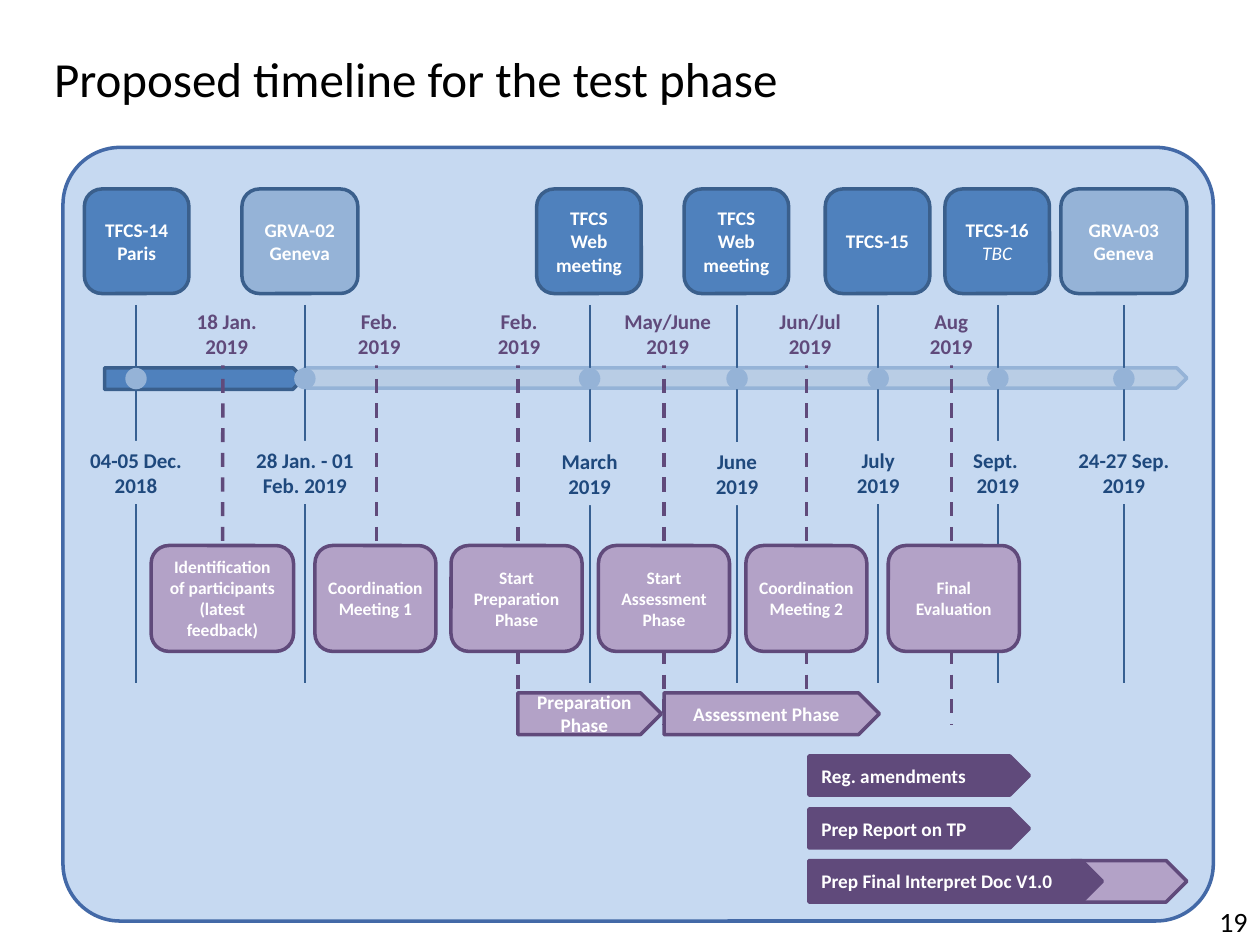
from lxml.etree import SubElement
from pptx import Presentation
from pptx.dml.color import RGBColor
from pptx.enum.dml import MSO_LINE
from pptx.enum.shapes import MSO_CONNECTOR, MSO_SHAPE as SHAPE
from pptx.enum.text import MSO_ANCHOR as ANCHOR, PP_ALIGN as ALIGN
from pptx.oxml.ns import qn
from pptx.util import Inches, Pt

BLACK = RGBColor(0x00, 0x00, 0x00)
WHITE = RGBColor(0xFF, 0xFF, 0xFF)
PANEL = RGBColor(0xC6, 0xD9, 0xF1)
PANEL_EDGE = RGBColor(0x43, 0x69, 0xA7)
BLUE = RGBColor(0x4F, 0x81, 0xBD)
BLUE_EDGE = RGBColor(0x3A, 0x5F, 0x8C)
LIGHT_BLUE = RGBColor(0x95, 0xB3, 0xD7)
PALE_BLUE = RGBColor(0xB9, 0xCD, 0xE5)
LINE_BLUE = RGBColor(0x37, 0x60, 0x92)
NAVY = RGBColor(0x1F, 0x49, 0x7D)
PURPLE = RGBColor(0x60, 0x4A, 0x7B)
LILAC = RGBColor(0xB3, 0xA2, 0xC7)

BOX_TEXT = dict(size=Pt(11), bold=True)
DATE_TEXT = dict(size=Pt(12), bold=True)
ACTIVITY_TEXT = dict(size=Pt(10), bold=True)

# Line x, box left, box width, fill, name, date, date top, date width
MEETINGS = [
    (1.08, 0.67, 0.83, BLUE, "TFCS-14\vParis", "04-05 Dec. 2018", 3.5, 1),
    (8.92, 8.42, 1, LIGHT_BLUE, "GRVA-03\vGeneva", "24-27 Sep.\v2019", 3.5, 1),
    (2.42, 1.92, 0.92, LIGHT_BLUE, "GRVA-02\vGeneva", "28 Jan. - 01 Feb. 2019", 3.5, 1.17),
    (7.92, 7.5, 0.83, BLUE, "TFCS-16\vTBC", "Sept. \v2019", 3.5, 1),
    (6.97, 6.55, 0.83, BLUE, "TFCS-15", "July\v2019", 3.5, 1),
    (4.68, 4.26, 0.83, BLUE, "TFCS\nWeb\nmeeting", "March 2019", 3.51, 1),
    (5.85, 5.43, 0.83, BLUE, "TFCS\nWeb\nmeeting", "June\v2019", 3.51, 1),
]

# Line x, line end, box left, box width, name, side inset, date, date left, date width
ACTIVITIES = [
    (1.77, 5.18, 1.2, 1.13, "Identification of participants\v(latest feedback)", 0.1,
     "18 Jan.\v2019", 1.3, 1),
    (6.4, 5.75, 5.92, 0.96, "Coordination Meeting 2", 0, "Jun/Jul\v2019", 5.93, 1),
    (4.11, 5.75, 3.58, 1.04, "Start Preparation Phase", 0.1, "Feb.\v2019", 3.62, 1),
    (5.27, 5.75, 4.75, 1.04, "Start Assessment Phase", 0, "May/June\v2019", 4.8, 1),
    (7.55, 5.75, 7.05, 1.04, "Final Evaluation", 0.1, "Aug\v2019", 7.23, 0.64),
    (2.99, 5.06, 2.5, 0.96, "Coordination Meeting 1", 0, "Feb.\v2019", 2.51, 1),
]

# Left, top, width, height, fill, text, alignment
PHASES = [
    (4.11, 5.5, 1.14, 0.33, LILAC, "Preparation Phase", ALIGN.CENTER),
    (5.27, 5.5, 1.71, 0.33, LILAC, "Assessment Phase", ALIGN.CENTER),
    (6.42, 6, 1.75, 0.31, PURPLE, "Reg. amendments", ALIGN.LEFT),
    (6.42, 6.42, 1.75, 0.31, PURPLE, "Prep Report on TP", ALIGN.LEFT),
    (8.5, 6.83, 0.92, 0.33, LILAC, "", ALIGN.LEFT),
    (6.42, 6.83, 2.33, 0.33, PURPLE, "Prep Final Interpret Doc V1.0", ALIGN.LEFT),
]


def write(tf, text, color, fmt, align=ALIGN.CENTER):
    """Fill a text frame; \\n starts a paragraph and \\v breaks a line."""
    tf.word_wrap = True
    for i, line in enumerate(text.split("\n")):
        p = tf.add_paragraph() if i else tf.paragraphs[0]
        p.text = line
        p.alignment = align
        for r in p.runs:
            r.font.name = "Calibri"
            r.font.color.rgb = color
            for name, value in fmt.items():
                setattr(r.font, name, value)
        for br in p._p.findall(qn("a:br")):
            SubElement(br, qn("a:rPr")).set("sz", str(int(fmt["size"].pt * 100)))


def add_block(shapes, kind, box, fill, edge=None):
    sp = shapes.add_shape(kind, *map(Inches, box))
    sp.shadow.inherit = False
    sp.fill.solid()
    sp.fill.fore_color.rgb = fill
    if edge is None:
        sp.line.fill.background()
    else:
        sp.line.color.rgb = edge
        sp.line.width = Pt(2)
    return sp


def add_label(shapes, kind, box, fill, edge, text, color, fmt, align=ALIGN.CENTER, inset=0.1):
    sp = add_block(shapes, kind, box, fill, edge)
    tf = sp.text_frame
    tf.vertical_anchor = ANCHOR.MIDDLE
    tf.margin_left = tf.margin_right = Inches(inset)
    write(tf, text, color, fmt, align)
    return sp


def add_drop_line(shapes, x, bottom, color, width, dash=None):
    line = shapes.add_connector(MSO_CONNECTOR.STRAIGHT, Inches(x), Inches(2.42),
                                Inches(x), Inches(bottom))
    line.line.color.rgb = color
    line.line.width = Pt(width)
    if dash:
        line.line.dash_style = dash
    SubElement(line._element.spPr, qn("a:effectLst"))
    return line


def add_meeting(slide, x, left, width, fill, name, date, date_top, date_width):
    shapes = slide.shapes.add_group_shape().shapes
    add_drop_line(shapes, x, 5.42, LINE_BLUE, 1)
    add_block(shapes, SHAPE.OVAL, (x - 0.085, 2.92, 0.17, 0.17), LIGHT_BLUE)
    box = add_label(shapes, SHAPE.ROUNDED_RECTANGLE, (left, 1.5, width, 0.83),
                    fill, BLUE_EDGE, name, WHITE, BOX_TEXT)
    for r in box.text_frame.paragraphs[0].runs:
        if r.text == "TBC":
            r.font.bold, r.font.italic = False, True
    add_label(shapes, SHAPE.ROUNDED_RECTANGLE,
              (x - date_width / 2, date_top, date_width, 0.5),
              PANEL, None, date, NAVY, DATE_TEXT)


def add_activity(slide, x, bottom, left, width, name, inset, date, date_left, date_width):
    shapes = slide.shapes.add_group_shape().shapes
    line = add_drop_line(shapes, x, bottom, PURPLE, 2, MSO_LINE.DASH)
    box = add_label(shapes, SHAPE.ROUNDED_RECTANGLE, (left, 4.33, width, 0.84),
                    LILAC, PURPLE, name, WHITE, ACTIVITY_TEXT, inset=inset)
    if bottom == 5.18:
        line.end_connect(box, 2)
    add_label(shapes, SHAPE.ROUNDED_RECTANGLE, (date_left, 2.4, date_width, 0.5),
              PANEL, None, date, PURPLE, DATE_TEXT)


def add_title(slide, text):
    title = slide.shapes.title
    title.left, title.top, title.width, title.height = map(Inches, (0.33, 0.33, 9.17, 0.57))
    title.text_frame.vertical_anchor = ANCHOR.MIDDLE
    write(title.text_frame, text, BLACK, dict(size=Pt(28)), ALIGN.LEFT)


def add_page_number(slide, number):
    sp = slide.shapes.add_textbox(*map(Inches, (8.33, 7.13, 1.67, 0.37)))
    write(sp.text_frame, number, BLACK, dict(size=Pt(16)), ALIGN.RIGHT)


def main():
    prs = Presentation()
    prs.slide_width, prs.slide_height = Inches(10), Inches(7.5)
    slide = prs.slides.add_slide(prs.slide_layouts[5])
    shapes = slide.shapes

    add_title(slide, "Proposed timeline for the test phase")
    add_page_number(slide, "19")
    panel = add_block(shapes, SHAPE.ROUNDED_RECTANGLE, (0.5, 1.17, 9.13, 6.14),
                      PANEL, PANEL_EDGE)
    panel.adjustments[0] = 0.074
    add_block(shapes, SHAPE.PENTAGON, (2.42, 2.92, 7, 0.16), PALE_BLUE, LIGHT_BLUE)
    add_block(shapes, SHAPE.PENTAGON, (0.83, 2.92, 1.58, 0.17), BLUE, BLUE_EDGE)

    for meeting in MEETINGS:
        add_meeting(slide, *meeting)
    for activity in ACTIVITIES:
        add_activity(slide, *activity)
    # Phase arrows come last so that they cover the ends of the dashed lines
    for *box, fill, text, align in PHASES:
        add_label(shapes, SHAPE.PENTAGON, box, fill, PURPLE, text, WHITE, BOX_TEXT, align)

    prs.save("out.pptx")


if __name__ == "__main__":
    main()
